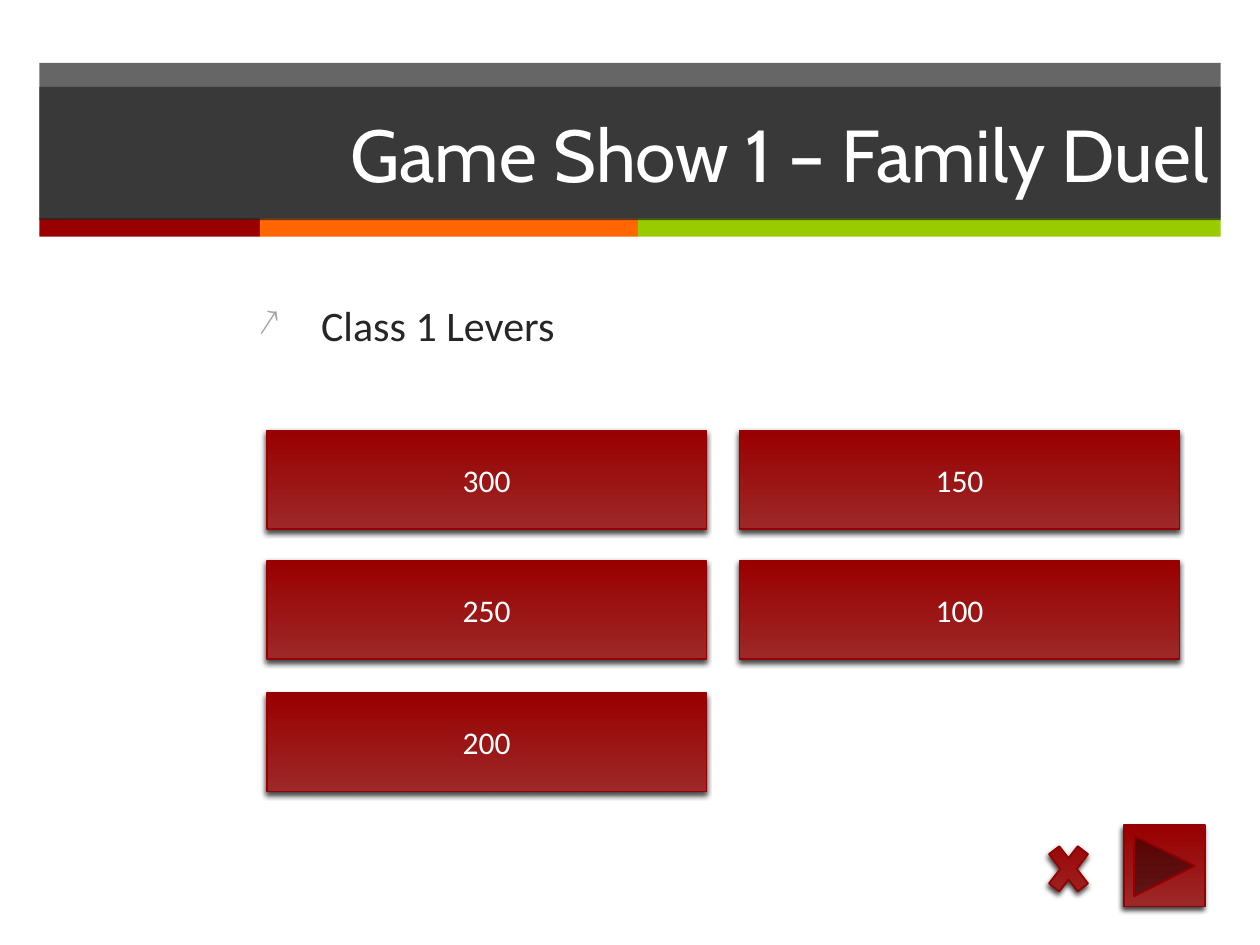
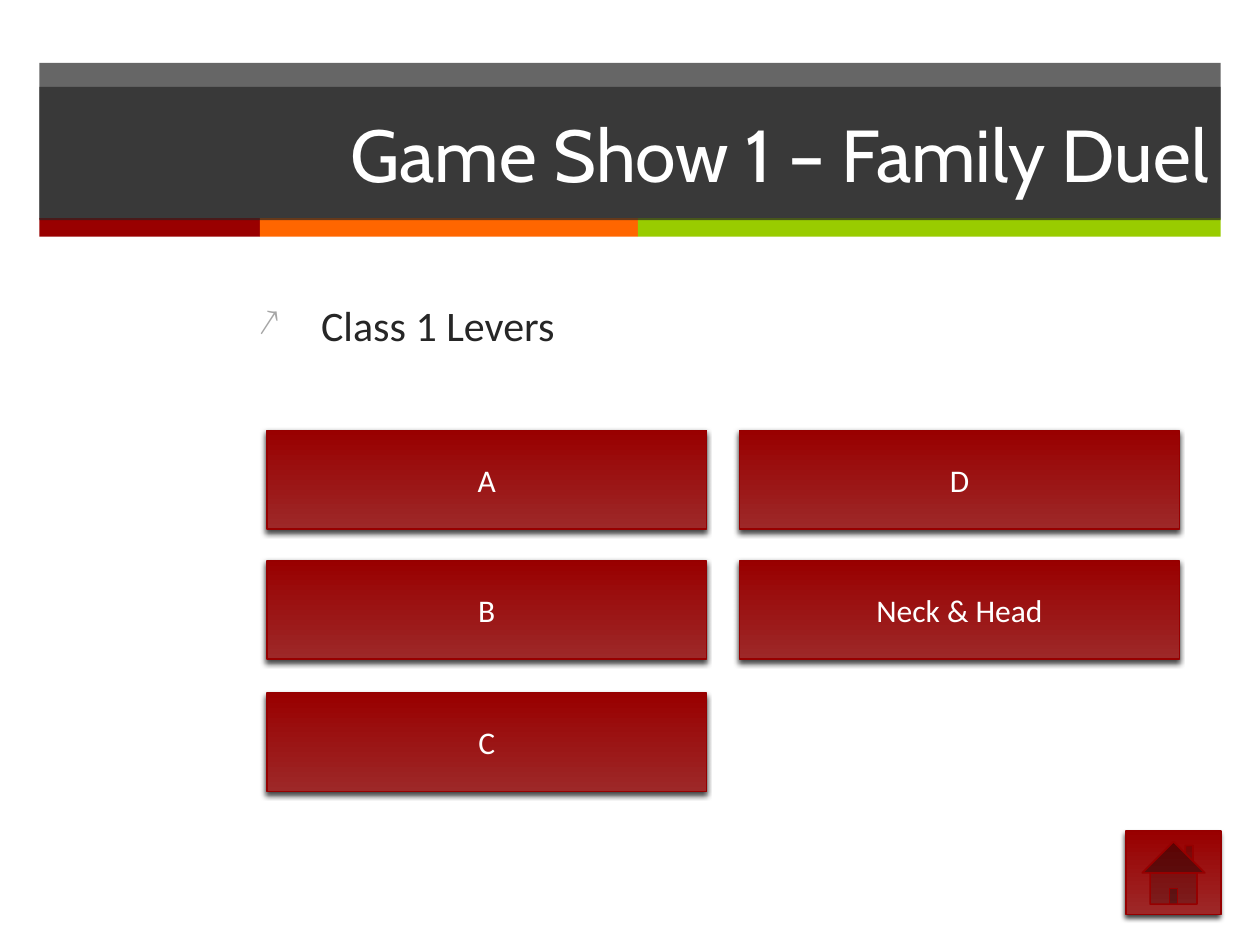
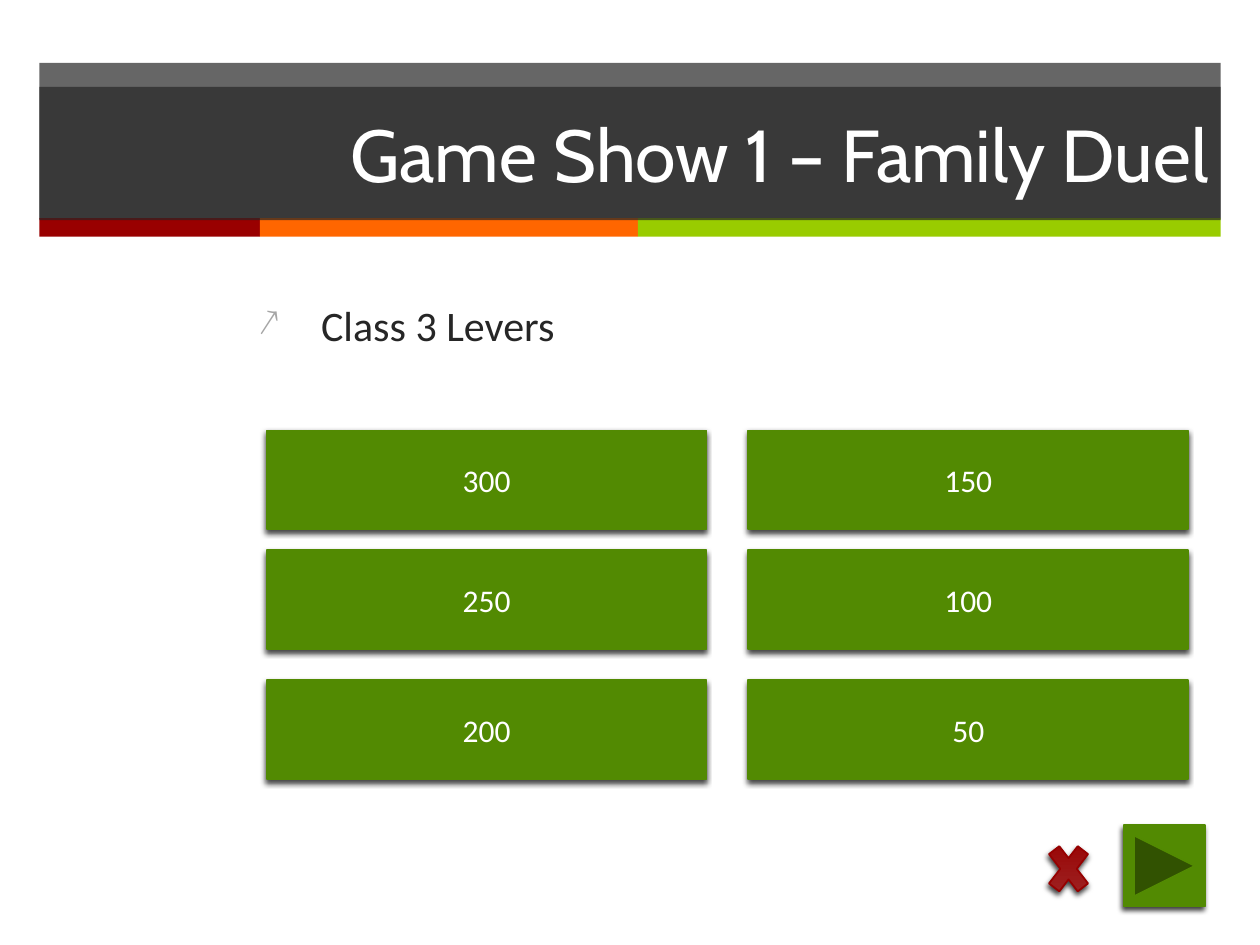
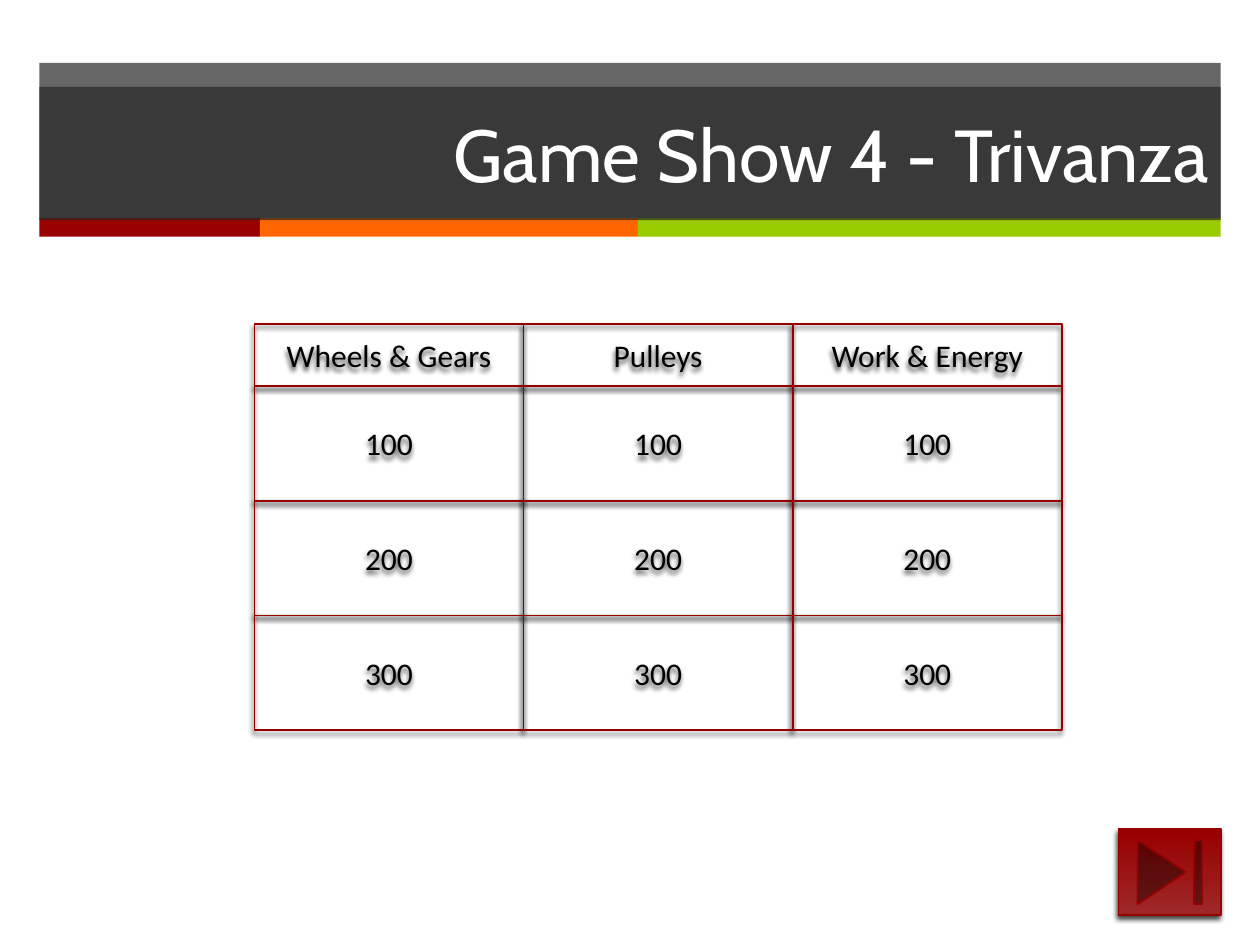
"""Build four game show slides: three answer boards and one question grid."""
from pptx import Presentation
from pptx.dml.color import RGBColor
from pptx.enum.shapes import MSO_SHAPE as Preset
from pptx.enum.text import MSO_ANCHOR as Anchor, PP_ALIGN as Align
from pptx.oxml.ns import qn
from pptx.oxml.xmlchemy import OxmlElement
from pptx.util import Pt

CHARCOAL = RGBColor(0x26, 0x26, 0x26)
WHITE = RGBColor(0xFF, 0xFF, 0xFF)
BLACK = RGBColor(0, 0, 0)
RED = RGBColor(0x99, 0, 0)
SOFT_RED = RGBColor(0x9D, 0x28, 0x28)
EDGE_RED = RGBColor(0x96, 0, 0)
ORANGE = RGBColor(0xFF, 0x66, 0)
LIME = RGBColor(0x99, 0xCC, 0)
GREEN = RGBColor(0x52, 0x8A, 0x02)
TITLE_FONT, BODY_FONT = "Cabin", "Calibri"

RED_STYLE = ((SOFT_RED, RED), EDGE_RED)
GREEN_STYLE = ((GREEN,), GREEN)
OUTLINE_STYLE = ((), EDGE_RED)

NEXT = (Preset.ACTION_BUTTON_FORWARD_OR_NEXT, 642.2, 471.6, 46.4, 46.4)
HOME = (Preset.ACTION_BUTTON_HOME, 643.6, 475, 54, 47.6)
END = (Preset.ACTION_BUTTON_END, 639.2, 473.8, 58.4, 49)
CROSS = (Preset.MATH_MULTIPLY, 594.8, 476, 31.6, 41)

FEUD = "Game Show 1 – Family Duel"
RED_GRID = {"columns": (152.4, 422.6), "rows": (246, 320.4, 396)}
GREEN_GRID = {"columns": (152.4, 427.6), "rows": (246, 314.4, 388.8)}
BOARDS = [
    {"topic": "Class 1 Levers", "answers": ["300", "250", "200", "150", "100"],
     "grid": RED_GRID, "style": RED_STYLE,
     "buttons": [(NEXT, RED_STYLE), (CROSS, RED_STYLE)]},
    {"topic": "Class 1 Levers", "answers": ["A", "B", "C", "D", "Neck & Head"],
     "grid": RED_GRID, "style": RED_STYLE, "buttons": [(HOME, RED_STYLE)]},
    {"topic": "Class 3 Levers",
     "answers": ["300", "250", "200", "150", "100", "50"],
     "grid": GREEN_GRID, "style": GREEN_STYLE,
     "buttons": [(NEXT, GREEN_STYLE), (CROSS, RED_STYLE)]},
]
QUIZ_TITLE = "Game Show 4 - Trivanza"
QUIZ_ROWS = [
    ["Wheels & Gears", "Pulleys", "Work & Energy"],
    ["100"] * 3, ["200"] * 3, ["300"] * 3,
]

BAND_LEFT, BAND_WIDTH = 22.5, 675
STRIPES = [(RED, 126), (ORANGE, 216), (LIME, 333)]
ANSWER_SIZE = (251.4, 56.4)
QUIZ_LEFT, QUIZ_TOP, QUIZ_WIDTH = 145.4, 185.2, 153.8
QUIZ_HEADER, QUIZ_HEIGHT = 35.4, 65.6


def add_child(parent, tag, **attributes):
    child = OxmlElement(tag)
    for name, value in attributes.items():
        child.set(name, str(value))
    parent.append(child)
    return child


def write(shape, text, font, size, color, align):
    para = shape.text_frame.paragraphs[0]
    para.text = text
    para.alignment = align
    for span in para.runs:
        span.font.name, span.font.size = font, Pt(size)
        span.font.color.rgb = color
    return para


def add_box(slide, preset, left, top, width, height):
    box = slide.shapes.add_shape(preset, Pt(left), Pt(top), Pt(width), Pt(height))
    box.shadow.inherit = False
    box.line.fill.background()
    box.text_frame.word_wrap = True
    box.text_frame.vertical_anchor = Anchor.MIDDLE
    return box


def add_band(slide, left, top, width, height, color, opacity=100):
    band = add_box(slide, Preset.RECTANGLE, left, top, width, height)
    band.fill.solid()
    band.fill.fore_color.rgb = color
    if opacity < 100:
        tint = band._element.spPr.find(qn("a:solidFill")).find(qn("a:srgbClr"))
        add_child(tint, "a:alpha", val=opacity * 1000)
    return band


def add_raised(slide, preset, left, top, width, height, style):
    fills, edge = style
    box = add_box(slide, preset, left, top, width, height)
    if len(fills) == 2:
        box.fill.gradient()
        box.fill.gradient_angle = 90
        for stop, color in zip(box.fill.gradient_stops, fills):
            stop.color.rgb = color
    elif fills:
        box.fill.solid()
        box.fill.fore_color.rgb = fills[0]
    else:
        box.fill.background()
    box.line.color.rgb = edge
    box.line.width = Pt(1)
    effects = box._element.spPr.find(qn("a:effectLst"))
    shadow = add_child(effects, "a:outerShdw", blurRad=int(Pt(3)), dist=int(Pt(2)),
                       dir=110 * 60000, algn="tl", rotWithShape=0)
    tint = add_child(shadow, "a:srgbClr", val=BLACK)
    add_child(tint, "a:alpha", val=75000)
    return box


def add_label(slide, text, left, top, width, height, style, color):
    box = add_raised(slide, Preset.RECTANGLE, left, top, width, height, style)
    write(box, text, BODY_FONT, 18, color, Align.CENTER)


def add_topic(slide, text):
    box = slide.shapes.add_textbox(Pt(140.4), Pt(167.8), Pt(557.2), Pt(44.6))
    box.text_frame.word_wrap = True
    para = write(box, text, BODY_FONT, 24, CHARCOAL, Align.LEFT)
    para.space_before = Pt(20)
    props = para._p.get_or_add_pPr()
    props.set("marL", str(int(Pt(36))))
    props.set("indent", str(-int(Pt(36))))
    add_child(add_child(props, "a:buClr"), "a:srgbClr", val="A6A6A6")
    add_child(props, "a:buSzPct", val=90000)
    add_child(props, "a:buChar", char="↗")


def add_slide(deck, title):
    slide = deck.slides.add_slide(deck.slide_layouts[6])
    add_band(slide, BAND_LEFT, 36, BAND_WIDTH, 89, CHARCOAL, 70)
    left = BAND_LEFT
    for color, width in STRIPES:
        add_band(slide, left, 124.6, width, 10.6, color)
        left += width
    band = add_band(slide, BAND_LEFT, 49.6, BAND_WIDTH, 76.2, CHARCOAL, 70)
    write(band, title, TITLE_FONT, 42, WHITE, Align.RIGHT)
    return slide


def add_board(deck, board):
    slide = add_slide(deck, FEUD)
    add_topic(slide, board["topic"])
    columns, rows = board["grid"]["columns"], board["grid"]["rows"]
    for index, answer in enumerate(board["answers"]):
        column, row = divmod(index, len(rows))
        add_label(slide, answer, columns[column], rows[row], *ANSWER_SIZE,
                  board["style"], WHITE)
    for button, style in board["buttons"]:
        add_raised(slide, *button, style)


def add_quiz(deck):
    slide = add_slide(deck, QUIZ_TITLE)
    top = QUIZ_TOP
    for row, labels in enumerate(QUIZ_ROWS):
        height = QUIZ_HEIGHT if row else QUIZ_HEADER
        for column, label in enumerate(labels):
            add_label(slide, label, QUIZ_LEFT + column * QUIZ_WIDTH, top,
                      QUIZ_WIDTH, height, OUTLINE_STYLE, BLACK)
        top += height
    add_raised(slide, *END, RED_STYLE)


def main():
    deck = Presentation()
    deck.slide_width, deck.slide_height = Pt(720), Pt(540)
    for board in BOARDS:
        add_board(deck, board)
    add_quiz(deck)
    deck.save("out.pptx")


if __name__ == "__main__":
    main()
